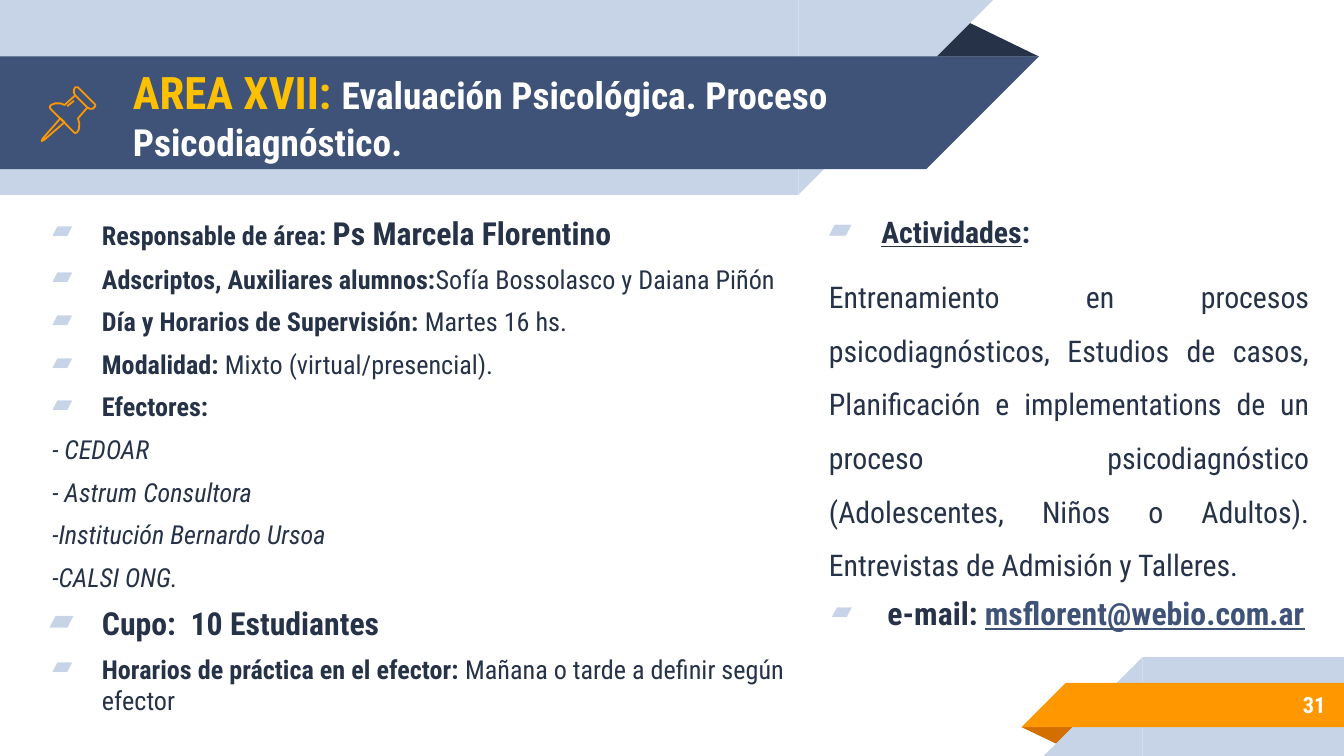
from dataclasses import dataclass

from lxml.etree import SubElement
from pptx import Presentation
from pptx.dml.color import RGBColor
from pptx.enum.shapes import MSO_CONNECTOR, MSO_SHAPE
from pptx.enum.text import MSO_ANCHOR, PP_ALIGN
from pptx.oxml.ns import qn
from pptx.util import Pt


@dataclass(frozen=True)
class Theme:
    font: str = "Roboto Condensed"
    ink: str = "263248"
    navy: str = "3F5378"
    pale: str = "C7D3E6"
    orange: str = "FF9800"
    rust: str = "D26F00"
    gold: str = "FFC000"
    white: str = "FFFFFF"
    body: float = 14
    activity: float = 16
    strong: float = 17
    subtitle: float = 20
    title: float = 24
    number: float = 12
    icon_line: float = 0.96


THEME = Theme()


class SlideBuilder:
    def __init__(self, slide, theme):
        self.slide = slide
        self.shapes = slide.shapes
        self.theme = theme

    def block(self, kind, left, top, width, height, color, rotation=0, apex=None):
        shape = self.shapes.add_shape(kind, Pt(left), Pt(top), Pt(width), Pt(height))
        shape.shadow.inherit = False
        shape.fill.solid()
        shape.fill.fore_color.rgb = RGBColor.from_string(color)
        shape.line.fill.background()
        shape.rotation = rotation
        if apex is not None:
            shape.adjustments[0] = apex

    def header_band(self, top, width, height, color):
        """Band from the left edge whose right end slants back to the bottom."""
        self.block(MSO_SHAPE.RECTANGLE, 0, top, width, height, color)
        self.block(MSO_SHAPE.RIGHT_TRIANGLE, width, top, height, height, color, rotation=90)

    def footer_band(self, left, top, height, color):
        """Band to the right edge whose left end slants out to the bottom."""
        self.block(MSO_SHAPE.RECTANGLE, left, top, 720 - left, height, color)
        self.block(MSO_SHAPE.RIGHT_TRIANGLE, left - height, top, height, height, color, rotation=270)

    def outline_style(self, shape):
        shape.line.color.rgb = RGBColor.from_string(self.theme.orange)
        shape.line.width = Pt(self.theme.icon_line)

    def outline(self, points, close=True):
        # The builder keeps whole units only, so it works in hundredths of a point.
        grid = [(x * 100, y * 100) for x, y in points]
        pen = self.shapes.build_freeform(*grid[0], scale=Pt(1) / 100)
        pen.add_line_segments(grid[1:], close=close)
        shape = pen.convert_to_shape()
        shape.shadow.inherit = False
        shape.fill.background()
        self.outline_style(shape)

    def line(self, *ends):
        connector = self.shapes.add_connector(MSO_CONNECTOR.STRAIGHT, *map(Pt, ends))
        self.outline_style(connector)
        SubElement(connector._element.spPr, qn("a:effectLst"))

    def text(self, left, top, width, height, anchor=MSO_ANCHOR.TOP):
        box = self.shapes.add_textbox(Pt(left), Pt(top), Pt(width), Pt(height))
        frame = box.text_frame
        inset = Pt(7.2)
        layout = dict(word_wrap=True, vertical_anchor=anchor, margin_left=inset,
                      margin_right=inset, margin_top=inset, margin_bottom=inset)
        for name, value in layout.items():
            setattr(frame, name, value)
        return frame

    def para(self, frame, spans, margin=0, indent=0, bullet=False, **layout):
        """Fill the empty first paragraph or add one; spans are (text, format)."""
        para = frame.paragraphs[0]
        if para.runs:
            para = frame.add_paragraph()
        for name, value in layout.items():
            setattr(para, name, value)
        properties = para._p.get_or_add_pPr()
        properties.set("marL", str(Pt(margin)))
        properties.set("indent", str(Pt(indent)))
        if bullet:
            color = SubElement(properties, qn("a:buClr"))
            SubElement(color, qn("a:srgbClr"), val=self.theme.pale)
            SubElement(properties, qn("a:buChar"), char="▰")
        for text, changes in spans:
            span = para.add_run()
            span.text = text
            style = dict(name=self.theme.font, size=self.theme.body,
                         color=self.theme.ink, bold=False) | changes
            span.font.color.rgb = RGBColor.from_string(style.pop("color"))
            style["size"] = Pt(style["size"])
            for name, value in style.items():
                setattr(span.font, name, value)

    def bullet(self, frame, spans, indent=-26.6, **layout):
        self.para(frame, spans, margin=36, indent=indent, bullet=True,
                  space_before=Pt(6), **layout)


def draw_bands(page):
    page.block(MSO_SHAPE.ISOSCELES_TRIANGLE, 495.4, 10.1, 61.2, 20.2, THEME.ink, apex=0.32)
    page.header_band(0, 427.7, 104.4, THEME.pale)
    page.header_band(30.2, 496.1, 60.5, THEME.navy)
    page.block(MSO_SHAPE.ISOSCELES_TRIANGLE, 547.2, 389.5, 31, 10.1, THEME.rust,
               rotation=180, apex=0.32)
    page.footer_band(612, 352.1, 52.9, THEME.pale)
    page.footer_band(571, 365.8, 23.8, THEME.orange)


def write_details(page):
    bold = dict(bold=True)
    strong = dict(bold=True, size=THEME.strong)
    frame = page.text(11.5, 107.3, 418.3, 298)
    facts = [
        [("Responsable de área: ", bold), ("Ps Marcela Florentino", strong)],
        [("Adscriptos, Auxiliares alumnos:", bold), ("Sofía Bossolasco y Daiana Piñón", {})],
        [("Día y Horarios de Supervisión:", bold), (" Martes 16 hs.", {})],
        [("Modalidad: ", bold), ("Mixto (virtual/presencial).", {})],
        [("Efectores:", bold)],
    ]
    for spans in facts:
        page.bullet(frame, spans)
    for place in ("- CEDOAR", "- Astrum Consultora", "-Institución Bernardo Ursoa", "-CALSI ONG."):
        page.para(frame, [(place, dict(italic=True))], margin=9.4, space_before=Pt(6))
    page.bullet(frame, [("Cupo:  10 Estudiantes", strong)], indent=-28.1)
    page.bullet(frame, [("Horarios de práctica en el efector:", bold),
                        (" Mañana o tarde a definir según efector", {})])


def write_activities(page):
    heading = dict(bold=True, size=THEME.activity)
    strong = dict(bold=True, size=THEME.strong)
    frame = page.text(429.1, 107.3, 279.4, 239.8)
    page.bullet(frame, [("Actividades", heading | dict(underline=True)), (":", heading)],
                indent=-28.1, alignment=PP_ALIGN.JUSTIFY)
    page.para(frame, [(
        "Entrenamiento en procesos psicodiagnósticos, Estudios de casos, "
        "Planificación e implementations de un proceso psicodiagnóstico "
        "(Adolescentes, Niños o Adultos). Entrevistas de Admisión y Talleres.",
        dict(size=THEME.activity))],
        margin=7.9, alignment=PP_ALIGN.JUSTIFY, line_spacing=1.5, space_before=Pt(6))
    page.bullet(frame, [(" ", {}), ("e-mail: ", strong),
                        ("msflorent@webio.com.ar",
                         strong | dict(color=THEME.navy, underline=True))])


def write_title_and_number(page):
    number = page.text(599.8, 365, 117.4, 25.2, MSO_ANCHOR.MIDDLE)
    page.para(number, [("31", dict(size=THEME.number, color=THEME.white, bold=True))],
              alignment=PP_ALIGN.RIGHT)
    title = page.text(64.1, 31, 445, 60.5, MSO_ANCHOR.MIDDLE)
    page.para(title, [
        ("AREA XVII: ", dict(size=THEME.title, color=THEME.gold, bold=True)),
        ("Evaluación Psicológica. Proceso Psicodiagnóstico.",
         dict(size=THEME.subtitle, color=THEME.white, bold=True))])


def draw_pushpin(page):
    needle = [(32.4, 63.4), (23, 74.2), (22.3, 75.6), (23.8, 74.9), (34.6, 65.5)]
    cap = [(40.3, 51.1), (46.8, 57.6), (48.2, 58.3), (49.7, 58.3), (51.1, 56.9),
           (51.1, 56.2), (41.8, 46.8), (40.3, 46.8), (39.6, 48.2), (39.6, 49.7)]
    collar = [(40.3, 51.1), (34.6, 56.2), (32.4, 55.4), (29.5, 55.4), (27.4, 56.2),
              (26.6, 57.2), (27, 58.3), (39.6, 70.8), (40.3, 71.3), (41.4, 70.8),
              (42.3, 69.1), (42.5, 66.2), (41.8, 63.4), (46.8, 57.6)]
    page.outline(needle)
    page.outline(cap)
    page.outline(collar, close=False)
    page.line(36, 56.9, 39.6, 54)


def main():
    deck = Presentation()
    deck.slide_width, deck.slide_height = Pt(720), Pt(405)
    page = SlideBuilder(deck.slides.add_slide(deck.slide_layouts[6]), THEME)
    draw_bands(page)
    write_details(page)
    write_activities(page)
    write_title_and_number(page)
    draw_pushpin(page)
    deck.save("out.pptx")


if __name__ == "__main__":
    main()
